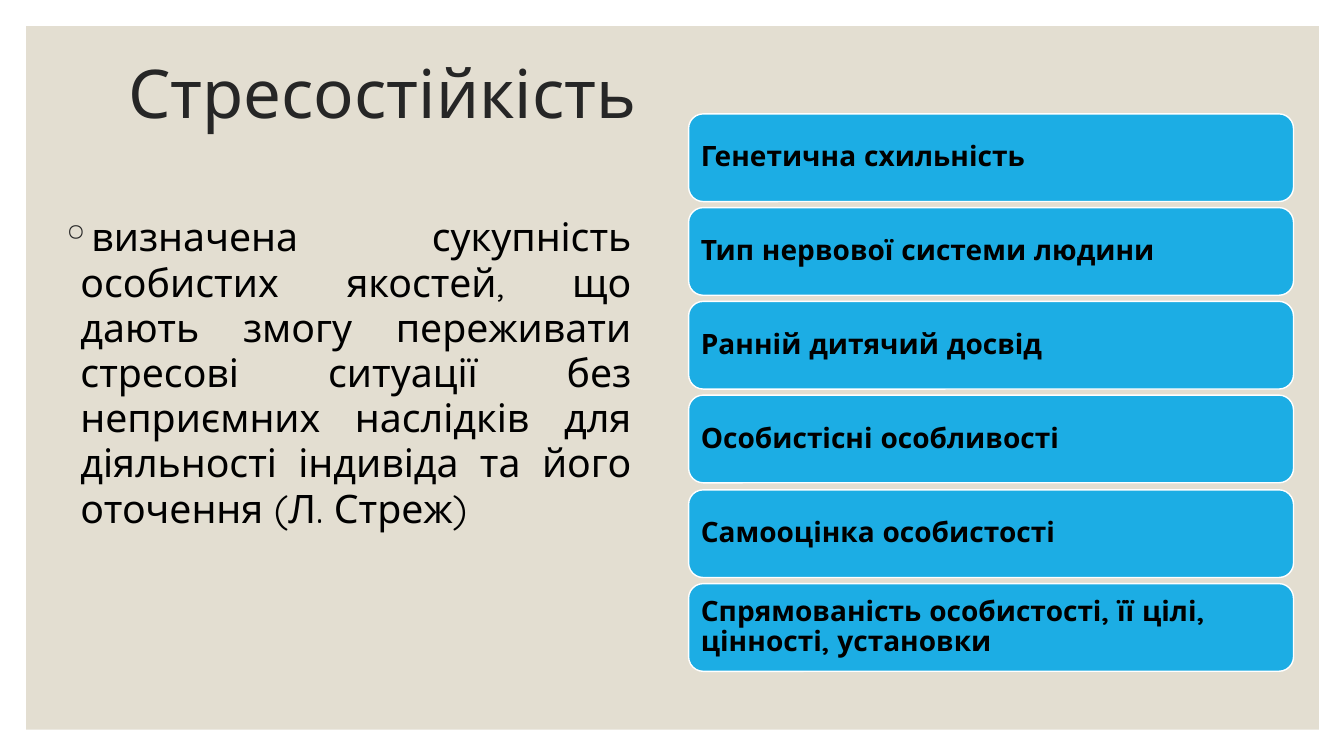
from lxml.etree import SubElement
from pptx import Presentation
from pptx.dml.color import RGBColor
from pptx.enum.shapes import MSO_SHAPE as Shape
from pptx.enum.text import MSO_ANCHOR as Anchor, PP_ALIGN as Align
from pptx.oxml.ns import qn
from pptx.util import Pt

PX = 9144  # 100 px to the inch
FONT = "Quicksand"
TITLE = "Стресостійкість"
DEFINITION = (
    "визначена сукупність особистих якостей, що дають змогу переживати "
    "стресові ситуації без неприємних наслідків для діяльності індивіда "
    "та його оточення (Л. Стреж)"
)
FACTORS = [
    "Генетична схильність",
    "Тип нервової системи людини",
    "Ранній дитячий досвід",
    "Особистісні особливості",
    "Самооцінка особистості",
    "Спрямованість особистості, її цілі, цінності, установки",
]


def color(value):
    return RGBColor.from_string(value)


def emu(*lengths):
    return [length * PX for length in lengths]


def write(shape, text, size, ink, anchor, align=Align.LEFT, spacing=0.9, bold=False):
    """Fill a shape with one formatted paragraph and return the paragraph."""
    frame = shape.text_frame
    frame.text = text
    frame.word_wrap = True
    frame.vertical_anchor = anchor
    paragraph = frame.paragraphs[0]
    paragraph.alignment = align
    paragraph.line_spacing = spacing
    font = paragraph.runs[0].font
    font.name, font.size, font.bold = FONT, Pt(size), bold
    font.color.rgb = color(ink)
    return paragraph


def add_panel(slide, box, kind, fill):
    shape = slide.shapes.add_shape(kind, *emu(*box))
    shape.shadow.inherit = False
    shape.fill.solid()
    shape.fill.fore_color.rgb = color(fill)
    return shape


def add_backdrop(slide, box):
    """Place the beige panel behind everything else."""
    backdrop = add_panel(slide, box, Shape.RECTANGLE, "E3DED1")
    backdrop.line.fill.background()
    slide.shapes.title.element.addprevious(backdrop.element)


def add_title(slide, box):
    title = slide.shapes.title
    title.left, title.top, title.width, title.height = emu(*box)
    write(title, TITLE, 48, "262626", Anchor.MIDDLE)


def add_definition(slide, box):
    definition = slide.shapes.add_textbox(*emu(*box))
    paragraph = write(definition, DEFINITION, 28, "000000", Anchor.TOP,
                      Align.JUSTIFY, spacing=0.96)
    paragraph.space_before = Pt(9)
    properties = paragraph._p.get_or_add_pPr()
    properties.set("marL", str(20 * PX))
    properties.set("indent", str(-20 * PX))
    bullet_color = SubElement(properties, qn("a:buClr"))
    SubElement(bullet_color, qn("a:srgbClr"), val="262626")
    SubElement(properties, qn("a:buChar"), char="◦")


def add_factors(slide, box, gap=6):
    """Stack one card per factor with equal gaps down the box."""
    left, top, width, height = box
    pitch = (height + gap) / len(FACTORS)
    for index, factor in enumerate(FACTORS):
        card_box = (left, round(top + index * pitch), width, round(pitch - gap))
        card = add_panel(slide, card_box, Shape.ROUNDED_RECTANGLE, "1CADE4")
        card.line.color.rgb = color("FFFFFF")
        card.line.width = Pt(1)
        write(card, factor, 20, "000000", Anchor.MIDDLE, bold=True)
        frame = card.text_frame
        # The rounded corners already inset the text by 4 px.
        frame.margin_left = frame.margin_right = 8 * PX
        frame.margin_top = frame.margin_bottom = 8 * PX


def main():
    presentation = Presentation()
    presentation.slide_width, presentation.slide_height = emu(1333, 750)
    slide = presentation.slides.add_slide(presentation.slide_layouts[5])
    add_backdrop(slide, (26, 26, 1282, 698))
    add_title(slide, (117, 35, 1100, 121))
    add_definition(slide, (50, 209, 586, 431))
    add_factors(slide, (683, 113, 600, 553))
    presentation.save("out.pptx")


if __name__ == "__main__":
    main()
